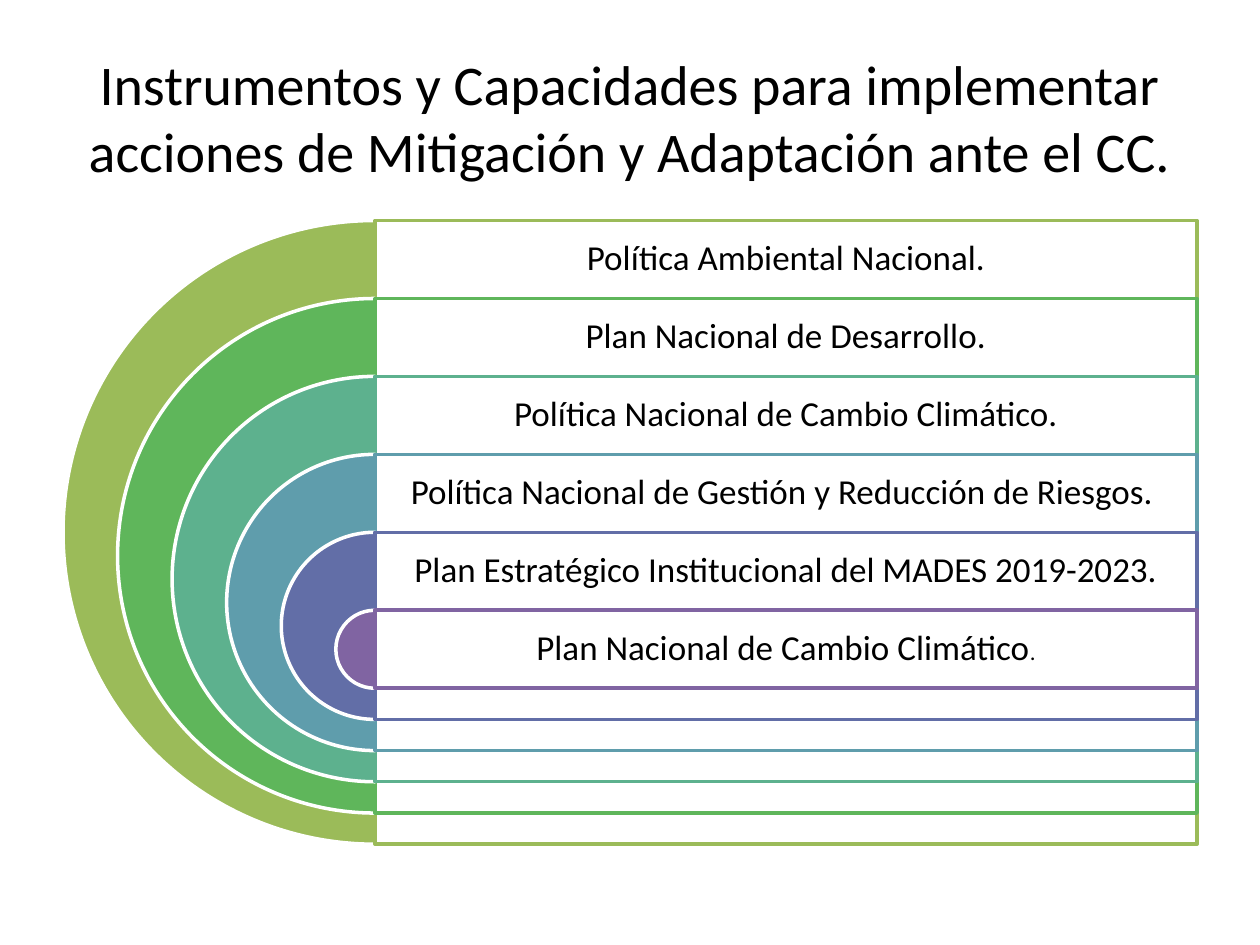
import pptx
import pptx.util
import pptx.dml.color
import pptx.enum.shapes
import pptx.enum.text
import pptx.oxml.ns
import lxml.etree

WIDE, HIGH = 10, 7.5
HUES = {
    "ink": "000000", "paper": "FFFFFF", "olive": "9BBB59", "green": "5FB65B",
    "jade": "5DB18E", "teal": "5F9DAC", "indigo": "626EA7", "violet": "8064A2",
}
TITLE = ("Instrumentos y Capacidades para implementar acciones de "
         "Mitigación y Adaptación ante el CC.")
PLANS = [
    ("olive", [("Política Ambiental Nacional.", 20)]),
    ("green", [("Plan Nacional de Desarrollo.", 20)]),
    ("jade", [("Política Nacional de Cambio Climático.", 20)]),
    ("teal", [("Política Nacional de Gestión y Reducción de Riesgos. ", 20)]),
    ("indigo", [("Plan Estratégico Institucional del MADES 2019-2023.", 20)]),
    ("violet", [("Plan Nacional de Cambio Climático", 20), (".", 13)]),
]


def hue(name):
    """Return the named colour."""
    return pptx.dml.color.RGBColor.from_string(HUES[name])


def span(box):
    """Turn a box in inches into lengths."""
    return [pptx.util.Inches(side) for side in box]


def form(shapes, kind, box, fill, line):
    """Add a flat preset shape with a 2 pt outline."""
    shape = shapes.add_shape(kind, *span(box))
    shape.shadow.inherit = False
    shape.fill.solid()
    shape.fill.fore_color.rgb = hue(fill)
    shape.line.color.rgb = hue(line)
    shape.line.width = pptx.util.Pt(2)
    return shape


def label(shapes, box, runs, inset, lead):
    """Add centred text, run by run."""
    frame = shapes.add_textbox(*span(box)).text_frame
    frame.word_wrap = True
    frame.vertical_anchor = pptx.enum.text.MSO_ANCHOR.MIDDLE
    frame.margin_left = frame.margin_right = pptx.util.Inches(inset)
    frame.margin_top = frame.margin_bottom = pptx.util.Inches(min(inset, 0.08))
    para = frame.paragraphs[0]
    para.alignment = pptx.enum.text.PP_ALIGN.CENTER
    para.line_spacing = lead
    for text, size in runs:
        run = para.add_run()
        run.text = text
        run.font.name = "Calibri"
        run.font.size = pptx.util.Pt(size)
        run.font.color.rgb = hue("ink")


def fade(shape, share):
    """Set the opacity of a solid fill."""
    tint = shape.fill._xPr.find(".//" + pptx.oxml.ns.qn("a:srgbClr"))
    alpha = lxml.etree.SubElement(tint, pptx.oxml.ns.qn("a:alpha"))
    alpha.set("val", str(int(share * 100000)))


def target(shapes, box, plans):
    """Nest half discs on the left, each with a labelled panel."""
    left, top, width, height = box
    kinds = pptx.enum.shapes.MSO_SHAPE
    row = height / (len(plans) + 2)
    step = (height - row) / (len(plans) - 1)
    axis = left + height / 2
    wide = left + width - axis
    for rank, (tone, runs) in enumerate(plans):
        size = height - rank * step
        head = top + rank * row
        disc = form(shapes, kinds.PIE, (axis - size / 2, head, size, size),
                    tone, "paper")
        disc.adjustments[0], disc.adjustments[1] = 54, 162
        panel = form(shapes, kinds.RECTANGLE, (axis, head, wide, size),
                     "paper", tone)
        fade(panel, 0.9)
        label(shapes, (axis, head, wide, row), runs, 0.08, 0.9)


def main():
    """Build and save the slide."""
    deck = pptx.Presentation()
    deck.slide_width, deck.slide_height = span((WIDE, HIGH))
    slide = deck.slides.add_slide(deck.slide_layouts[6])
    edge, body = WIDE * 0.05, WIDE * 0.9
    label(slide.shapes, (edge, HIGH * 0.04, body, HIGH / 6),
          [(TITLE, 32)], 0.1, 1)
    group = slide.shapes.add_group_shape()
    target(group.shapes, (edge, 1.75, body, HIGH * 0.66), PLANS)
    deck.save("out.pptx")


if __name__ == "__main__":
    main()
